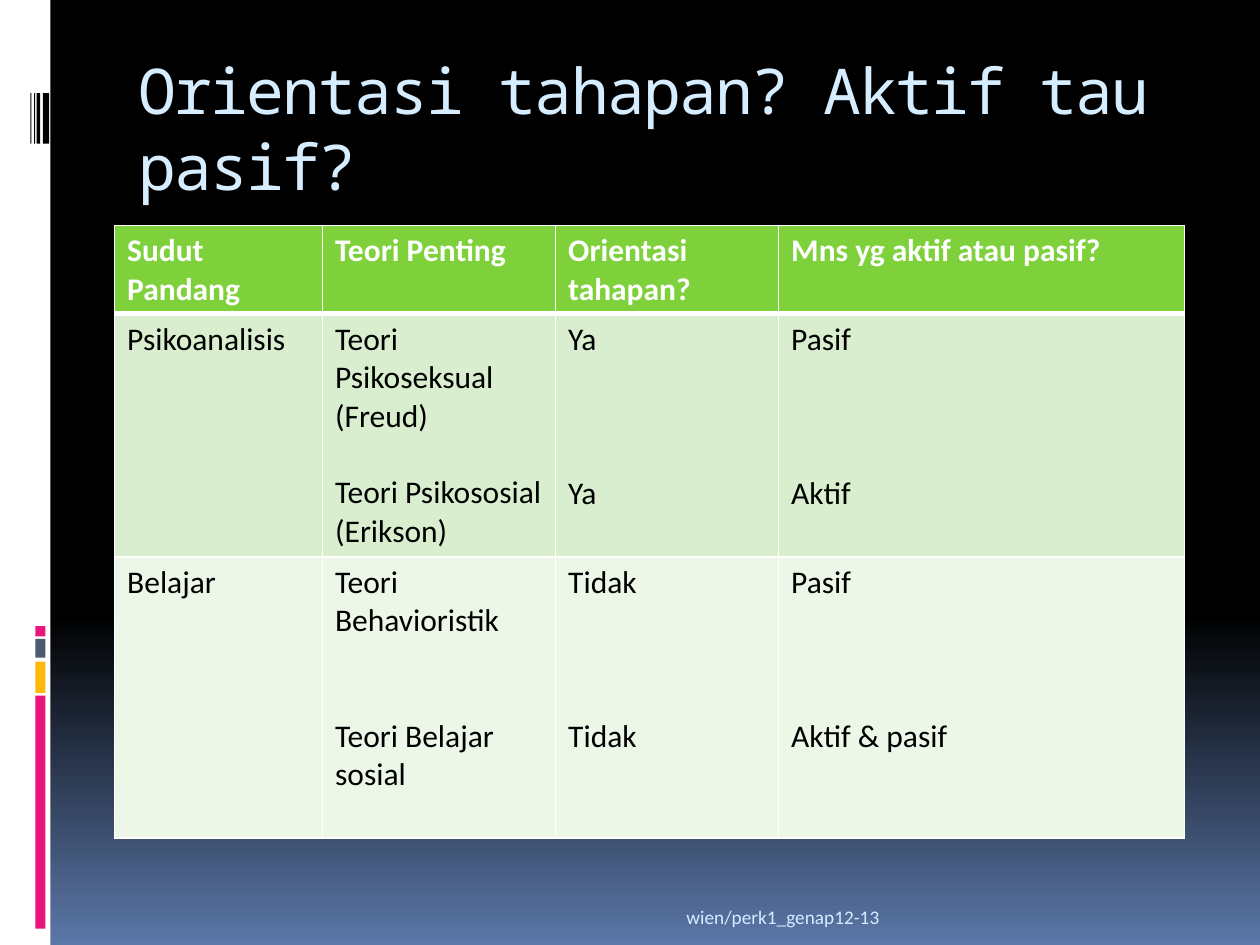
from lxml import etree
from pptx import Presentation
from pptx.dml.color import RGBColor
from pptx.enum.shapes import MSO_SHAPE
from pptx.enum.text import MSO_ANCHOR, MSO_AUTO_SIZE, PP_ALIGN
from pptx.oxml.ns import qn
from pptx.util import Inches, Pt

RECTANGLE = MSO_SHAPE.RECTANGLE
TOP, BOTTOM = MSO_ANCHOR.TOP, MSO_ANCHOR.BOTTOM
LEFT, RIGHT = PP_ALIGN.LEFT, PP_ALIGN.RIGHT
NO_AUTOFIT = MSO_AUTO_SIZE.NONE

BLACK = RGBColor(0x00, 0x00, 0x00)
WHITE = RGBColor(0xFF, 0xFF, 0xFF)
STEEL = RGBColor(0x5B, 0x77, 0xA8)
PINK = RGBColor(0xEA, 0x15, 0x7A)
AMBER = RGBColor(0xFE, 0xB8, 0x0A)
SLATE = RGBColor(0x4E, 0x5B, 0x6F)
PALE_BLUE = RGBColor(0xD6, 0xEC, 0xFF)
GREEN = RGBColor(0x7F, 0xD1, 0x3B)
LIGHT_GREEN = RGBColor(0xD8, 0xEE, 0xCE)
PALE_GREEN = RGBColor(0xEC, 0xF7, 0xE8)

TITLE_FONT = {"name": "Noto Sans Mono", "size": Pt(36)}
FOOTER_FONT = {"name": "Calibri", "size": Pt(11)}
HEADER_FONT = {"name": "Calibri", "size": Pt(18), "bold": True}
BODY_FONT = {"name": "Calibri", "size": Pt(18), "bold": False}
LINE_HEIGHT = 22  # points taken by one line of table text


def write(para, text, font_values, color):
    span = para.add_run()
    span.text = text
    for name, value in font_values.items():
        setattr(span.font, name, value)
    span.font.color.rgb = color
    return span


def add_border(cell, side, width):
    line = etree.SubElement(cell._tc.get_or_add_tcPr(), qn(f"a:ln{side}"), w=str(Pt(width)))
    fill = etree.SubElement(line, qn("a:solidFill"))
    etree.SubElement(fill, qn("a:srgbClr"), val=str(WHITE))


deck = Presentation()
deck.slide_width, deck.slide_height = Inches(10), Inches(7.5)
page = deck.slides.add_slide(deck.slide_layouts[5])

# Background
background = page.background.fill
background.gradient()
background.gradient_angle = 270
for stop, position, color in zip(background.gradient_stops, (0.65, 1), (BLACK, STEEL)):
    stop.position = position
    stop.color.rgb = color

# Side strip with its coloured blocks and bars
strip_parts = [
    (0, 0, 0.4, 7.5, WHITE),
    (0.28, 5.52, 0.08, 1.85, PINK),
    (0.28, 5.25, 0.08, 0.25, AMBER),
    (0.28, 5.07, 0.08, 0.15, SLATE),
    (0.28, 4.97, 0.08, 0.08, PINK),
]
for left, width in ((0.34, 0.05), (0.29, 0.03), (0.27, 0.01), (0.24, 0.01)):
    strip_parts.append((left, 0.74, width, 0.4, BLACK))
for *place, color in strip_parts:
    block = page.shapes.add_shape(RECTANGLE, *map(Inches, place))
    block.shadow.inherit = False
    block.fill.solid()
    block.fill.fore_color.rgb = color
    block.line.fill.background()

# Footer
footer = page.shapes.add_textbox(Inches(1), Inches(7.02), Inches(6.08), Inches(0.4))
footer.text_frame.word_wrap = True
footer.text_frame.vertical_anchor = BOTTOM
para = footer.text_frame.paragraphs[0]
para.alignment = RIGHT
write(para, "wien/perk1_genap12-13", FOOTER_FONT, PALE_BLUE)

# Table: each body cell lists (text, blank lines left above it)
column_widths = (1.65, 1.85, 1.77, 3.22)
rows = [
    (0.7, GREEN, HEADER_FONT, WHITE, [
        [("Sudut Pandang", 0)],
        [("Teori Penting", 0)],
        [("Orientasi", 0), ("tahapan?", 0)],
        [("Mns yg aktif atau pasif?", 0)],
    ]),
    (1.93, LIGHT_GREEN, BODY_FONT, BLACK, [
        [("Psikoanalisis", 0)],
        [("Teori Psikoseksual (Freud)", 0), ("Teori Psikososial (Erikson)", 1)],
        [("Ya", 0), ("Ya", 3)],
        [("Pasif", 0), ("Aktif", 3)],
    ]),
    (2.23, PALE_GREEN, BODY_FONT, BLACK, [
        [("Belajar", 0)],
        [("Teori Behavioristik", 0), ("Teori Belajar sosial", 2)],
        [("Tidak", 0), ("Tidak", 3)],
        [("Pasif", 0), ("Aktif & pasif", 3)],
    ]),
]
table = page.shapes.add_table(
    len(rows), len(column_widths), Inches(0.91), Inches(1.79),
    Inches(sum(column_widths)), Inches(sum(row[0] for row in rows))).table
for column, width in zip(table.columns, column_widths):
    column.width = Inches(width)
for index, (height, fill_color, font_values, text_color, contents) in enumerate(rows):
    table.rows[index].height = Inches(height)
    for cell, lines in zip(table.rows[index].cells, contents):
        for side in "LRTB":
            thick = (index, side) in ((0, "B"), (1, "T"))
            add_border(cell, side, 3 if thick else 1)
        cell.fill.solid()
        cell.fill.fore_color.rgb = fill_color
        frame = cell.text_frame
        for number, (text, blank_lines) in enumerate(lines):
            para = frame.add_paragraph() if number else frame.paragraphs[0]
            if blank_lines:
                para.space_before = Pt(blank_lines * LINE_HEIGHT)
            write(para, text, font_values, text_color)

# Title
title = page.shapes.title
title.left, title.top, title.width, title.height = map(Inches, (1, 0.36, 8.5, 1))
title.text_frame.word_wrap = True
title.text_frame.auto_size = NO_AUTOFIT
title.text_frame.vertical_anchor = TOP
para = title.text_frame.paragraphs[0]
para.alignment = LEFT
span = write(para, "Orientasi tahapan? Aktif tau pasif?", TITLE_FONT, PALE_BLUE)
span._r.get_or_add_rPr().set("spc", "-100")

deck.save("out.pptx")
